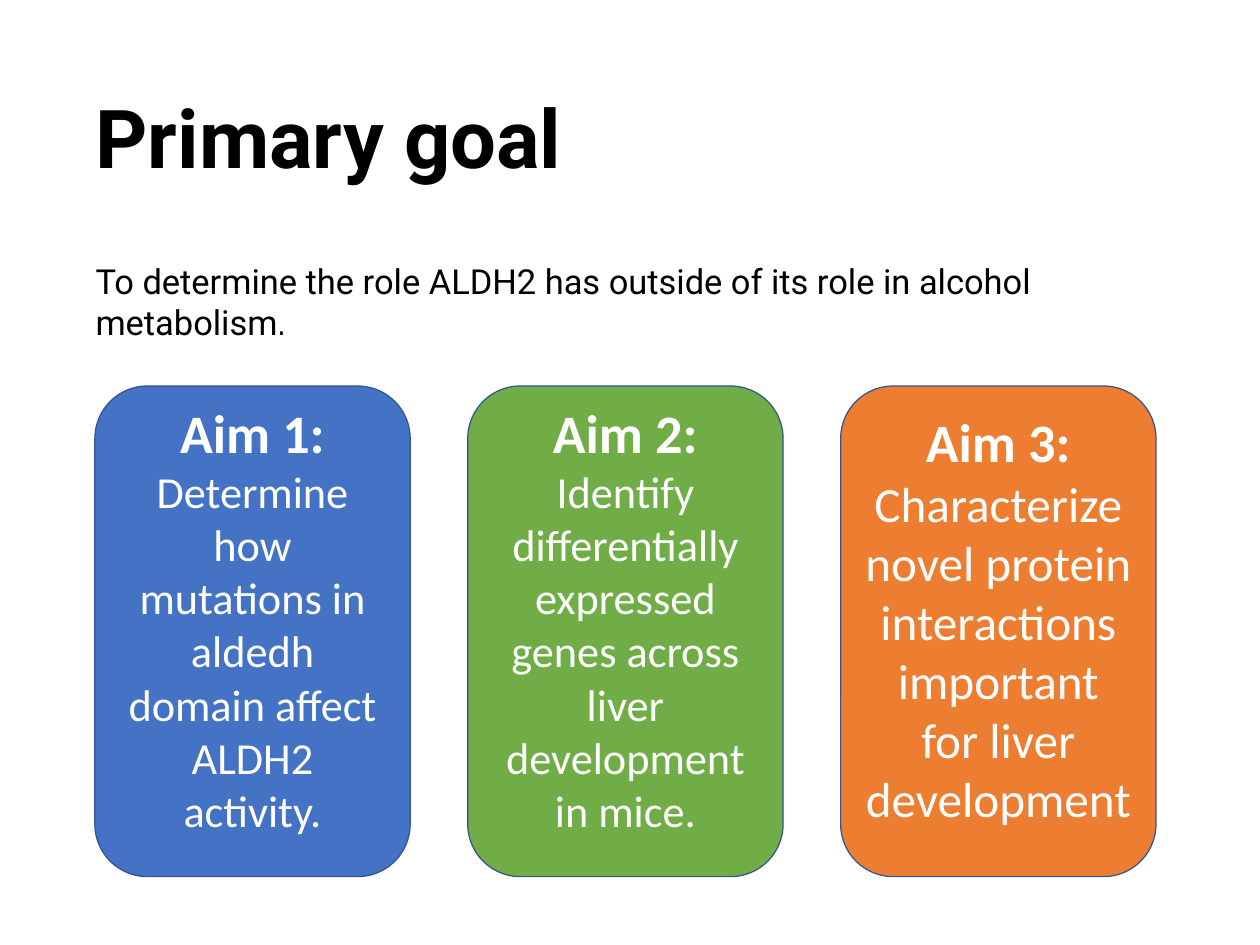
from pptx import Presentation
from pptx.dml.color import RGBColor
from pptx.enum.shapes import MSO_SHAPE as SHAPE
from pptx.enum.text import MSO_ANCHOR as ANCHOR, PP_ALIGN as ALIGN
from pptx.util import Cm, Pt

TITLE = "Primary goal"
GOAL = "To determine the role ALDH2 has outside of its role in alcohol metabolism"
AIMS = [  # label, text, text size, fill
    ("Aim 1: ", "Determine how mutations in aldedh domain affect ALDH2 activity.", 36, "4472C4"),
    ("Aim 2: ", "Identify differentially expressed genes across liver development in mice.", 36, "70AD47"),
    ("Aim 3: ", "Characterize novel protein interactions important for liver development", 40, "ED7D31"),
]
BLACK, WHITE, OUTLINE = "000000", "FFFFFF", "325491"

TEXT_LEFT = 2.49
CARD_LEFT, CARD_TOP, CARD_W, CARD_H, CARD_STEP = 2.72, 11.07, 9.04, 14.07, 10.69


def rgb(color):
    return RGBColor.from_string(color)


def set_font(font, name, size, color):
    font.name, font.size = name, Pt(size)
    font.color.rgb = rgb(color)


def add_run(p, text):
    r = p.add_run()
    r.text = text
    return r


def add_text_box(s, top, width, height):
    tf = s.shapes.add_textbox(Cm(TEXT_LEFT), Cm(top), Cm(width), Cm(height)).text_frame
    tf.word_wrap = True
    return tf


def add_card(s, left, label, text, size, fill):
    sp = s.shapes.add_shape(SHAPE.ROUNDED_RECTANGLE, Cm(left), Cm(CARD_TOP), Cm(CARD_W), Cm(CARD_H))
    sp.shadow.inherit = False
    sp.fill.solid()
    sp.fill.fore_color.rgb = rgb(fill)
    sp.line.color.rgb = rgb(OUTLINE)
    sp.line.width = Pt(1)
    tf = sp.text_frame
    tf.word_wrap = True
    tf.vertical_anchor = ANCHOR.MIDDLE
    tf.margin_bottom = Cm(0.9)
    p = tf.paragraphs[0]
    p.alignment = ALIGN.CENTER
    heading = add_run(p, label).font
    set_font(heading, "Calibri", 44, WHITE)
    heading.bold = True
    set_font(add_run(p, text).font, "Calibri", size, WHITE)


prs = Presentation()
prs.slide_width, prs.slide_height = Cm(36.12), Cm(27.1)
s = prs.slides.add_slide(prs.slide_layouts[6])

tf = add_text_box(s, 1.45, 31.17, 5.23)
tf.vertical_anchor = ANCHOR.MIDDLE
p = tf.paragraphs[0]
p.text = TITLE
p.line_spacing = 0.9
set_font(p.font, "Roboto", 66, BLACK)
p.font.bold = True

p = add_text_box(s, 7.32, 30.3, 1.45).paragraphs[0]
for text, name in [(GOAL, "Roboto"), (".", "Arial Narrow")]:
    set_font(add_run(p, text).font, name, 28, BLACK)

for i, aim in enumerate(AIMS):
    add_card(s, CARD_LEFT + i * CARD_STEP, *aim)

prs.save("out.pptx")
